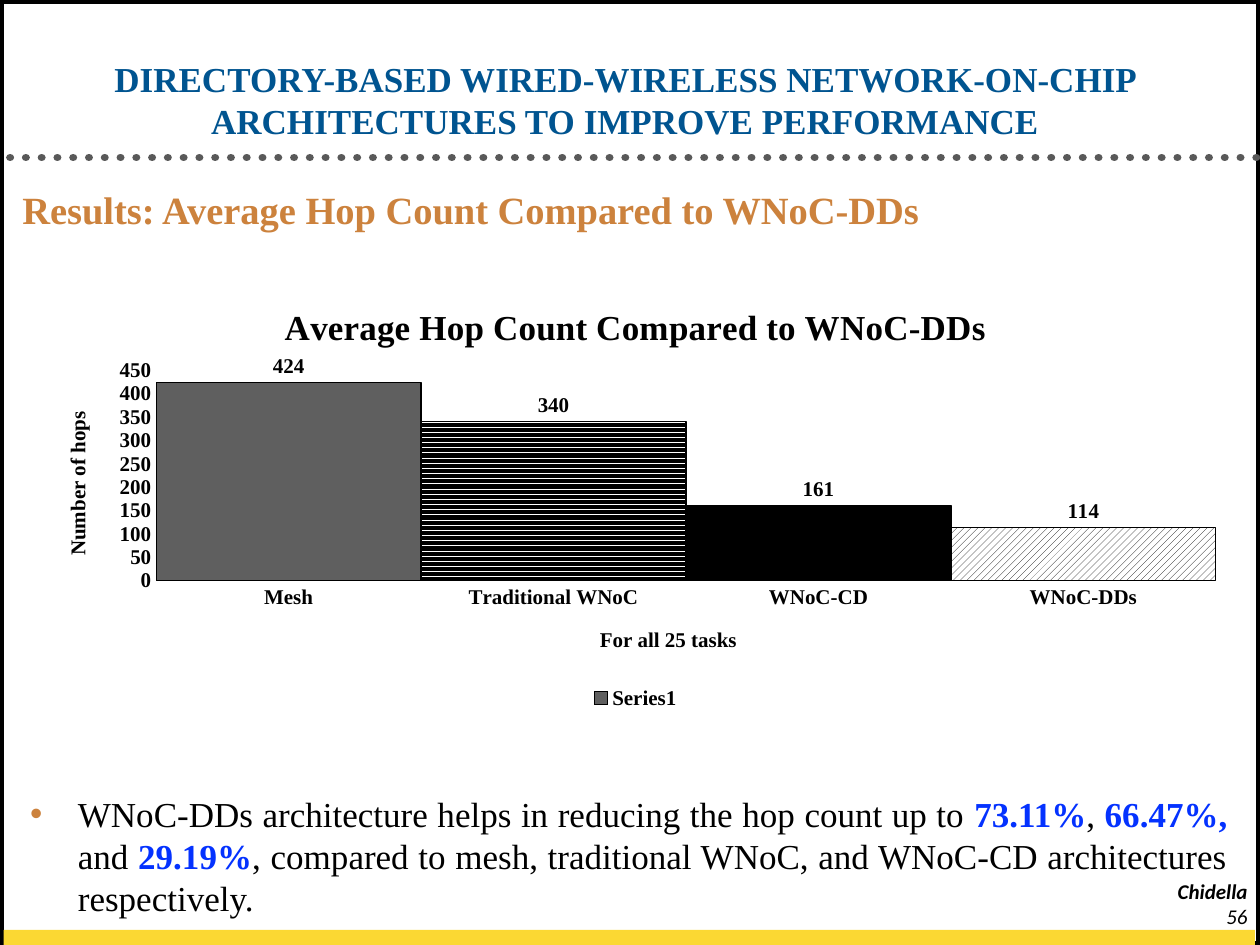
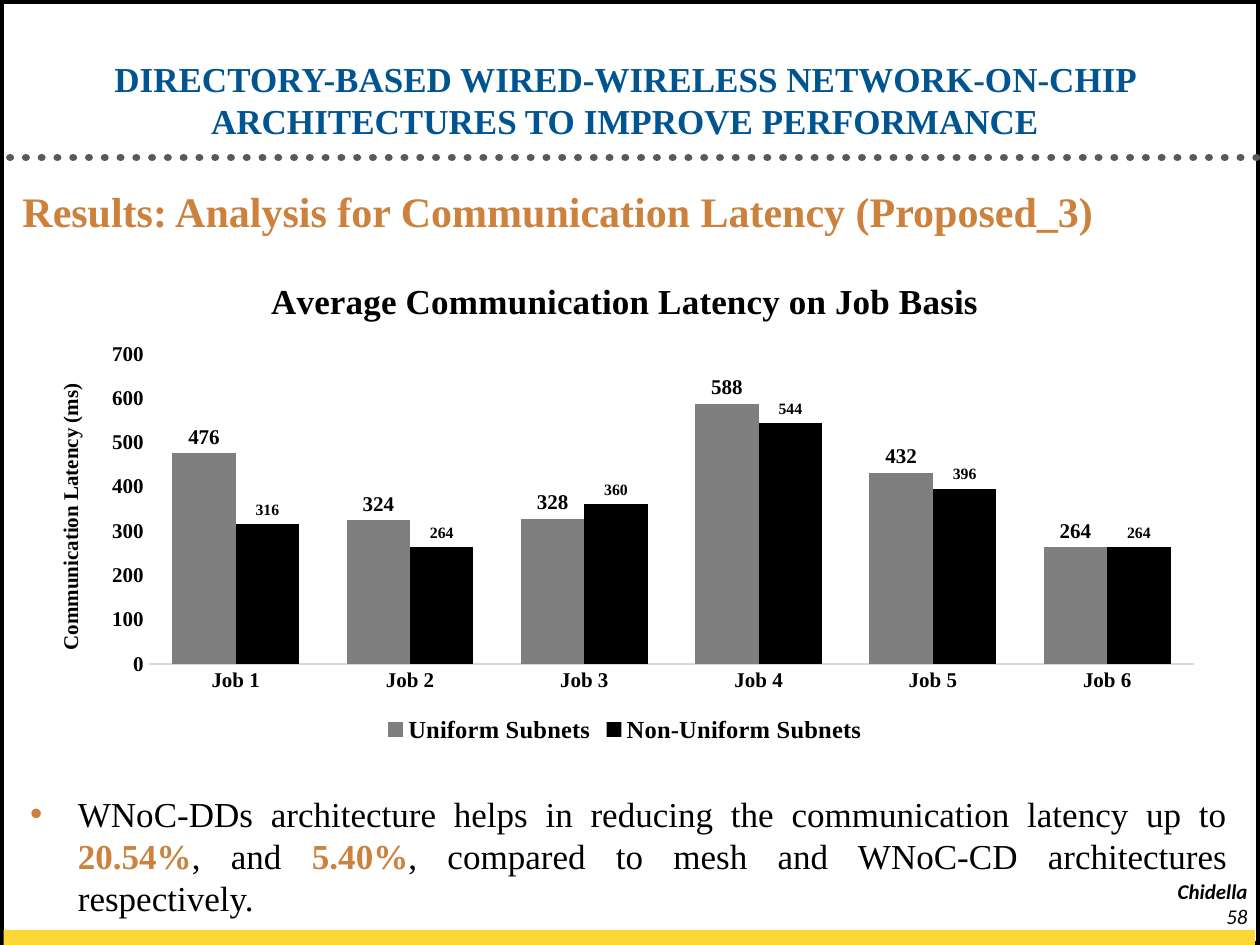
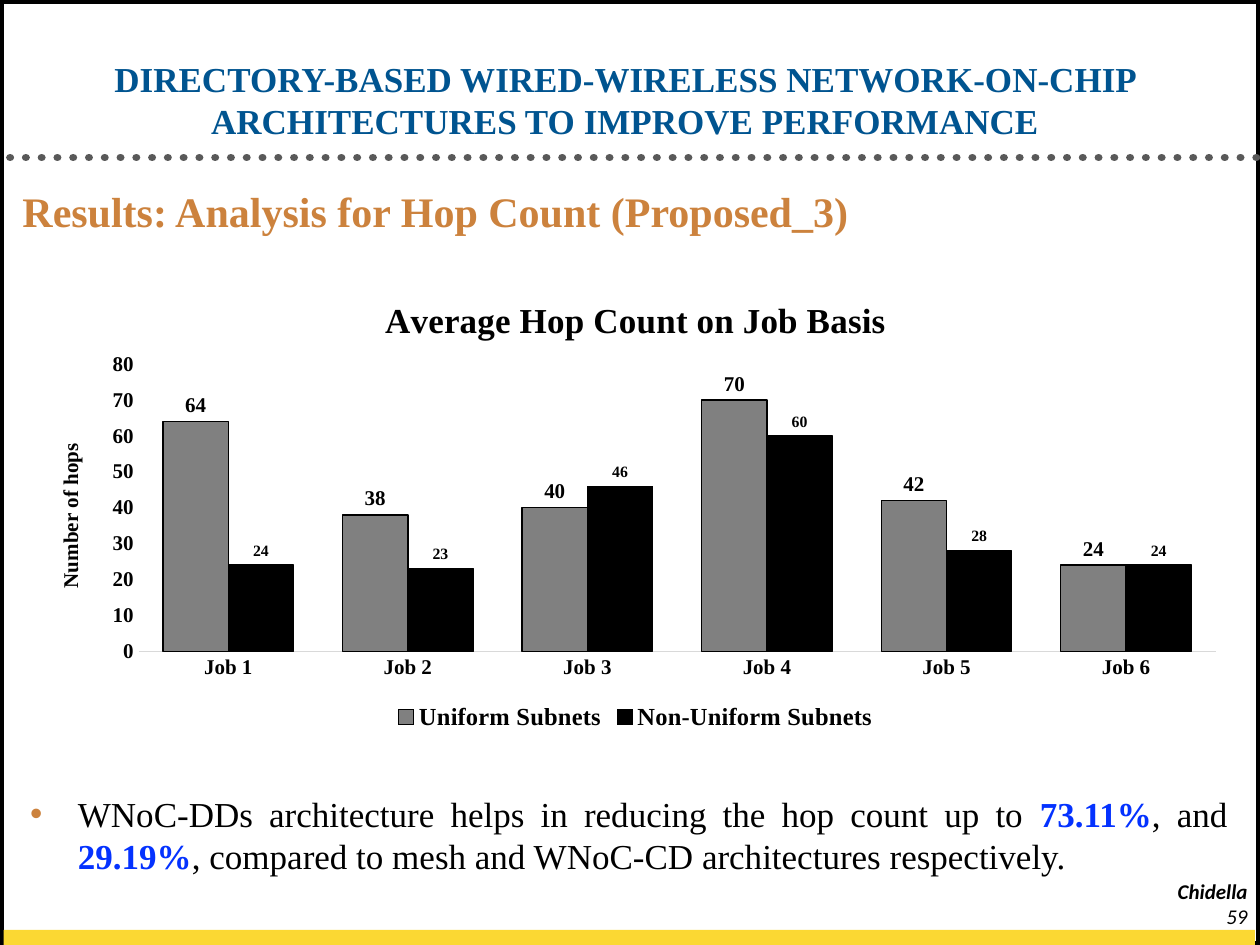
from lxml import etree
from pptx import Presentation
from pptx import util as u
from pptx.chart.data import CategoryChartData
from pptx.dml.color import RGBColor
from pptx.enum import chart as ch, dml, shapes, text
from pptx.oxml import parse_xml
from pptx.oxml.ns import qn

W, H = 10, 7.5
SERIF, SANS = "Times New Roman", "Calibri"
C = {"black": "000000", "white": "FFFFFF", "title": "005490", "accent": "CC823D",
     "blue": "0432FF", "band": "FBD833", "dots": "595959", "axis": "D9D9D9",
     "dark": "5F5F5F", "gray": "7F7F7F", "mid": "808080"}
A_NS = 'xmlns:a="http://schemas.openxmlformats.org/drawingml/2006/main"'
TITLE = "DIRECTORY-BASED WIRED-WIRELESS NETWORK-ON-CHIP ARCHITECTURES TO IMPROVE PERFORMANCE"
AUTHOR = "Chidella"
JOBS = [f"Job {i}" for i in range(1, 7)]

SLIDES = [
    dict(number=56, heading="Results: Average Hop Count Compared to WNoC-DDs", heading_size=22,
         bullet=[("WNoC-DDs architecture helps in reducing the hop count up to ", None),
                 ("73.11%", "blue"), (", ", None), ("66.47%,", "blue"), (" and ", None),
                 ("29.19%", "blue"),
                 (", compared to mesh, traditional WNoC, and WNoC-CD architectures respectively.", None)],
         bullet_height=1.11,
         chart=dict(title="Average Hop Count Compared to WNoC-DDs", box=(0.25, 2.25, 9.59, 3.42),
                    plot=(1.24, 2.94, 8.41, 1.67), y_title="Number of hops",
                    x_title="For all 25 tasks", x_title_at=(4.73, 4.94), top=450, step=50,
                    gap=0, legend_size=12, outline=True,
                    cats=["Mesh", "Traditional WNoC", "WNoC-CD", "WNoC-DDs"],
                    series=[("Series1", [424, 340, 161, 114], "dark", 12)],
                    points={1: dml.MSO_PATTERN.DARK_HORIZONTAL, 2: "black",
                            3: dml.MSO_PATTERN.WIDE_UPWARD_DIAGONAL})),
    dict(number=58, heading="Results: Analysis for Communication Latency (Proposed_3)", heading_size=24,
         bullet=[("WNoC-DDs architecture helps in reducing the communication latency up to ", None),
                 ("20.54%", "accent"), (", and ", None), ("5.40%", "accent"),
                 (", compared to mesh and WNoC-CD architectures respectively.", None)],
         bullet_height=1.11,
         chart=dict(title="Average Communication Latency on Job Basis", box=(0.25, 2.03, 9.42, 3.91),
                    plot=(1.18, 2.81, 8.3, 2.46), y_title="Communication Latency (ms)",
                    top=700, step=100, gap=75, legend_size=14, outline=False, cats=JOBS,
                    series=[("Uniform Subnets", [476, 324, 328, 588, 432, 264], "gray", 12),
                            ("Non-Uniform Subnets", [316, 264, 360, 544, 396, 264], "black", 9)])),
    dict(number=59, heading="Results: Analysis for Hop Count (Proposed_3)", heading_size=24,
         bullet=[("WNoC-DDs architecture helps in reducing the hop count up to ", None),
                 ("73.11%", "blue"), (", and ", None), ("29.19%", "blue"),
                 (", compared to mesh and WNoC-CD architectures respectively.", None)],
         bullet_height=0.77,
         chart=dict(title="Average Hop Count on Job Basis", box=(0.25, 2.19, 9.59, 3.65),
                    plot=(1.1, 2.89, 8.55, 2.28), y_title="Number of hops",
                    top=80, step=10, gap=75, legend_size=14, outline=True, cats=JOBS,
                    series=[("Uniform Subnets", [64, 38, 40, 70, 42, 24], "mid", 12),
                            ("Non-Uniform Subnets", [24, 23, 46, 60, 28, 24], "black", 9)])),
]


def rgb(name):
    return RGBColor.from_string(C[name])


def inches(*values):
    return [u.Inches(v) for v in values]


def style(font, size, color="black", bold=True, italic=False, face=SERIF):
    font.size, font.bold, font.italic, font.name = u.Pt(size), bold, italic, face
    font.color.rgb = rgb(color)


def write(tf, content, align=text.PP_ALIGN.LEFT, **fmt):
    tf.word_wrap = True
    p = tf.paragraphs[0]
    p.alignment = align
    r = p.add_run()
    r.text = content
    style(r.font, **fmt)
    return p


def text_box(s, box, content, **fmt):
    return write(s.shapes.add_textbox(*inches(*box)).text_frame, content, **fmt)


def add_rect(s, box, fill, line=None, width=0):
    sp = s.shapes.add_shape(shapes.MSO_SHAPE.RECTANGLE, *inches(*box))
    sp.shadow.inherit = False
    sp.fill.solid()
    sp.fill.fore_color.rgb = rgb(fill)
    if line:
        sp.line.color.rgb = rgb(line)
        sp.line.width = u.Pt(width)
    else:
        sp.line.fill.background()


def add_frame(s, number):
    add_rect(s, (0, 0, W, H), "white", "black", 4.5)
    rule = s.shapes.add_connector(shapes.MSO_CONNECTOR.STRAIGHT, *inches(0.08, 1.25, W, 1.25))
    rule.line.color.rgb = rgb("dots")
    rule.line.width = u.Pt(4.5)
    rule.line.dash_style = dml.MSO_LINE.ROUND_DOT
    sp_pr = rule.element.spPr
    sp_pr.find(qn("a:ln")).set("cap", "rnd")
    etree.SubElement(sp_pr, qn("a:effectLst"))
    add_rect(s, (0.03, 7.38, 9.93, 0.12), "band")
    for top, content, bold in ((7.12, str(number), False), (6.92, AUTHOR, True)):
        text_box(s, (9.08, top, 0.92, 0.26), content, align=text.PP_ALIGN.RIGHT,
                 size=12, bold=bold, italic=True, face=SANS)


def add_title(s):
    title = s.shapes.title
    title.left, title.top, title.width, title.height = inches(0.25, 0.42, 9.42, 0.75)
    title.text_frame.vertical_anchor = text.MSO_ANCHOR.BOTTOM
    title.text_frame.auto_size = text.MSO_AUTO_SIZE.NONE
    write(title.text_frame, TITLE, align=text.PP_ALIGN.CENTER, size=20, color="title")
    title.element.getparent().append(title.element)


def add_bullet(s, parts, height):
    tf = s.shapes.add_textbox(*inches(0.14, 6.24, 9.7, height)).text_frame
    tf.word_wrap = True
    p = tf.paragraphs[0]
    p.alignment = text.PP_ALIGN.JUSTIFY
    p_pr = p._p.get_or_add_pPr()
    p_pr.set("marL", str(u.Inches(0.38)))
    p_pr.set("indent", str(-u.Inches(0.38)))
    for xml in (f'<a:buClr {A_NS}><a:srgbClr val="{C["accent"]}"/></a:buClr>',
                f'<a:buFont {A_NS} typeface="Arial"/>', f'<a:buChar {A_NS} char="•"/>'):
        p_pr.append(parse_xml(xml))
    for content, color in parts:
        r = p.add_run()
        r.text = content
        style(r.font, 20, color or "black", bold=bool(color))


def set_layout(parent, box, at, inner=False):
    layout = parent.find(qn("c:layout"))
    if layout is None:
        layout = parent.makeelement(qn("c:layout"))
        tx = parent.find(qn("c:tx"))
        parent.insert(0 if tx is None else 1, layout)
    for child in list(layout):
        layout.remove(child)
    manual = etree.SubElement(layout, qn("c:manualLayout"))
    values = [("layoutTarget", "inner")] if inner else []
    values += [("xMode", "edge"), ("yMode", "edge"),
               ("x", (at[0] - box[0]) / box[2]), ("y", (at[1] - box[1]) / box[3])]
    if inner:
        values += [("w", at[2] / box[2]), ("h", at[3] / box[3])]
    for tag, value in values:
        shown = value if isinstance(value, str) else f"{value:.4f}"
        etree.SubElement(manual, qn(f"c:{tag}")).set("val", shown)


def style_axis(axis, title):
    axis.has_major_gridlines = False
    axis.major_tick_mark = axis.minor_tick_mark = ch.XL_TICK_MARK.NONE
    style(axis.tick_labels.font, 12)
    axis.has_title = bool(title)
    if title:
        write(axis.axis_title.text_frame, title, align=None, size=12)


def paint(fmt, fill, outline):
    if isinstance(fill, str):
        fmt.fill.solid()
        fmt.fill.fore_color.rgb = rgb(fill)
    else:
        fmt.fill.patterned()
        fmt.fill.pattern = fill
        fmt.fill.fore_color.rgb = rgb("black")
        fmt.fill.back_color.rgb = rgb("white")
    if outline:
        fmt.line.color.rgb = rgb("black")
        fmt.line.width = u.Pt(0.75)


def add_bars(s, d):
    data = CategoryChartData()
    data.categories = d["cats"]
    for name, values, _, _ in d["series"]:
        data.add_series(name, values)
    chart = s.shapes.add_chart(ch.XL_CHART_TYPE.COLUMN_CLUSTERED, *inches(*d["box"]), data).chart
    style(chart.font, 10, bold=False, face=SANS)
    chart.has_title = True
    write(chart.chart_title.text_frame, d["title"], align=None, size=20)
    chart.has_legend = True
    chart.legend.position = ch.XL_LEGEND_POSITION.BOTTOM
    chart.legend.include_in_layout = False
    style(chart.legend.font, d["legend_size"])

    cat, val = chart.category_axis, chart.value_axis
    style_axis(cat, d.get("x_title"))
    style_axis(val, d["y_title"])
    cat.format.line.color.rgb = rgb("axis")
    cat.format.line.width = u.Pt(0.75)
    val.format.line.fill.background()
    val.minimum_scale, val.maximum_scale, val.major_unit = 0, d["top"], d["step"]

    plot = chart.plots[0]
    plot.vary_by_categories = False
    plot.gap_width, plot.overlap = d["gap"], 0
    for series, (_, _, color, label_size) in zip(plot.series, d["series"]):
        paint(series.format, color, d["outline"])
        for i, fill in d.get("points", {}).items():
            paint(series.points[i].format, fill, d["outline"])
        labels = series.data_labels
        labels.show_value = True
        labels.position = ch.XL_LABEL_POSITION.OUTSIDE_END
        style(labels.font, label_size)

    set_layout(chart.element.find(".//" + qn("c:plotArea")), d["box"], d["plot"], inner=True)
    if "x_title_at" in d:
        set_layout(cat.axis_title.element if hasattr(cat.axis_title, "element")
                   else cat.axis_title._element, d["box"], d["x_title_at"])


def main():
    prs = Presentation()
    prs.slide_width, prs.slide_height = inches(W, H)
    for d in SLIDES:
        s = prs.slides.add_slide(prs.slide_layouts[5])
        add_frame(s, d["number"])
        p = text_box(s, (0.08, 1.47, 9.76, 0.5), d["heading"], size=d["heading_size"], color="accent")
        p.line_spacing = 0.9
        add_title(s)
        add_bullet(s, d["bullet"], d["bullet_height"])
        add_bars(s, d["chart"])
    prs.save("out.pptx")


if __name__ == "__main__":
    main()
